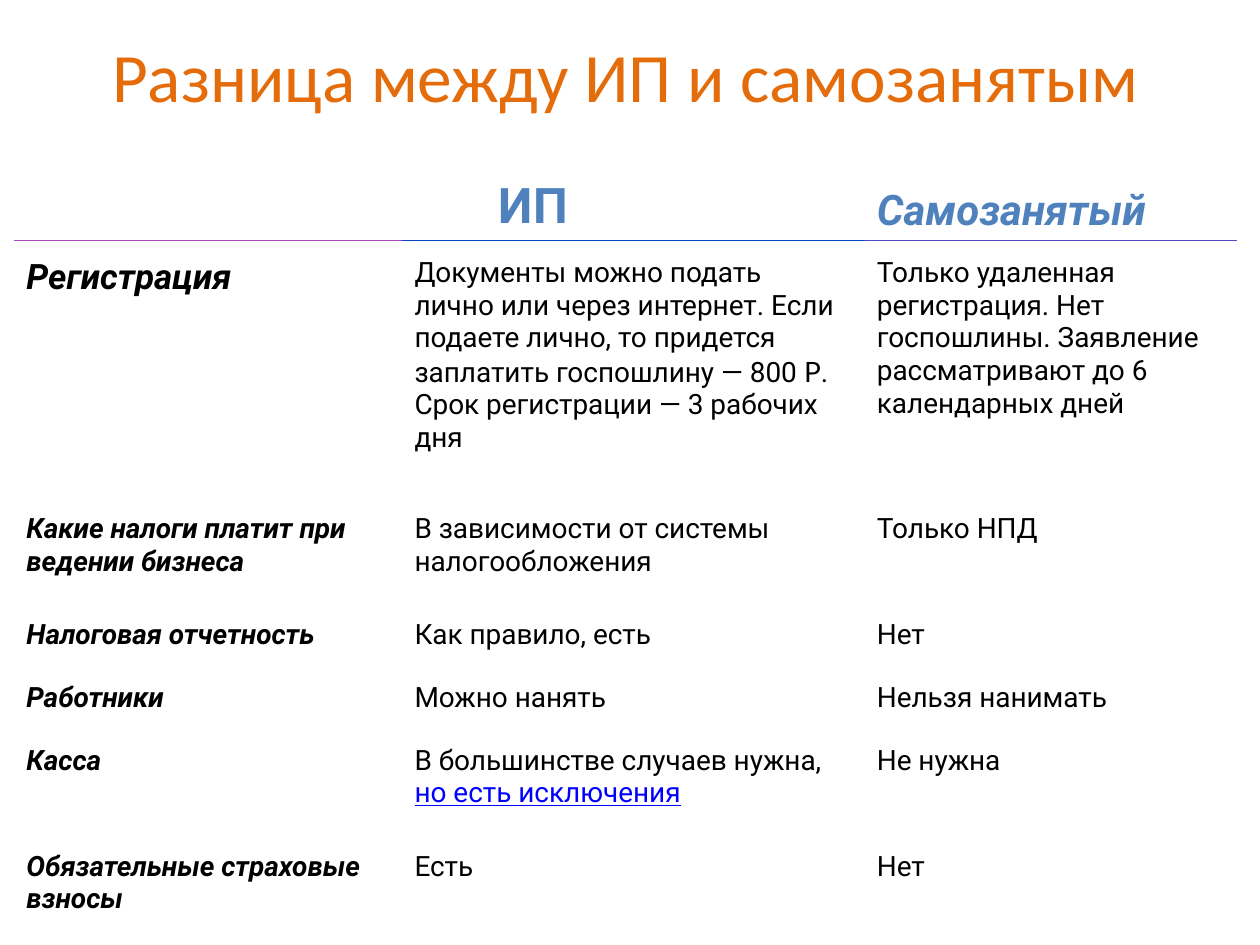
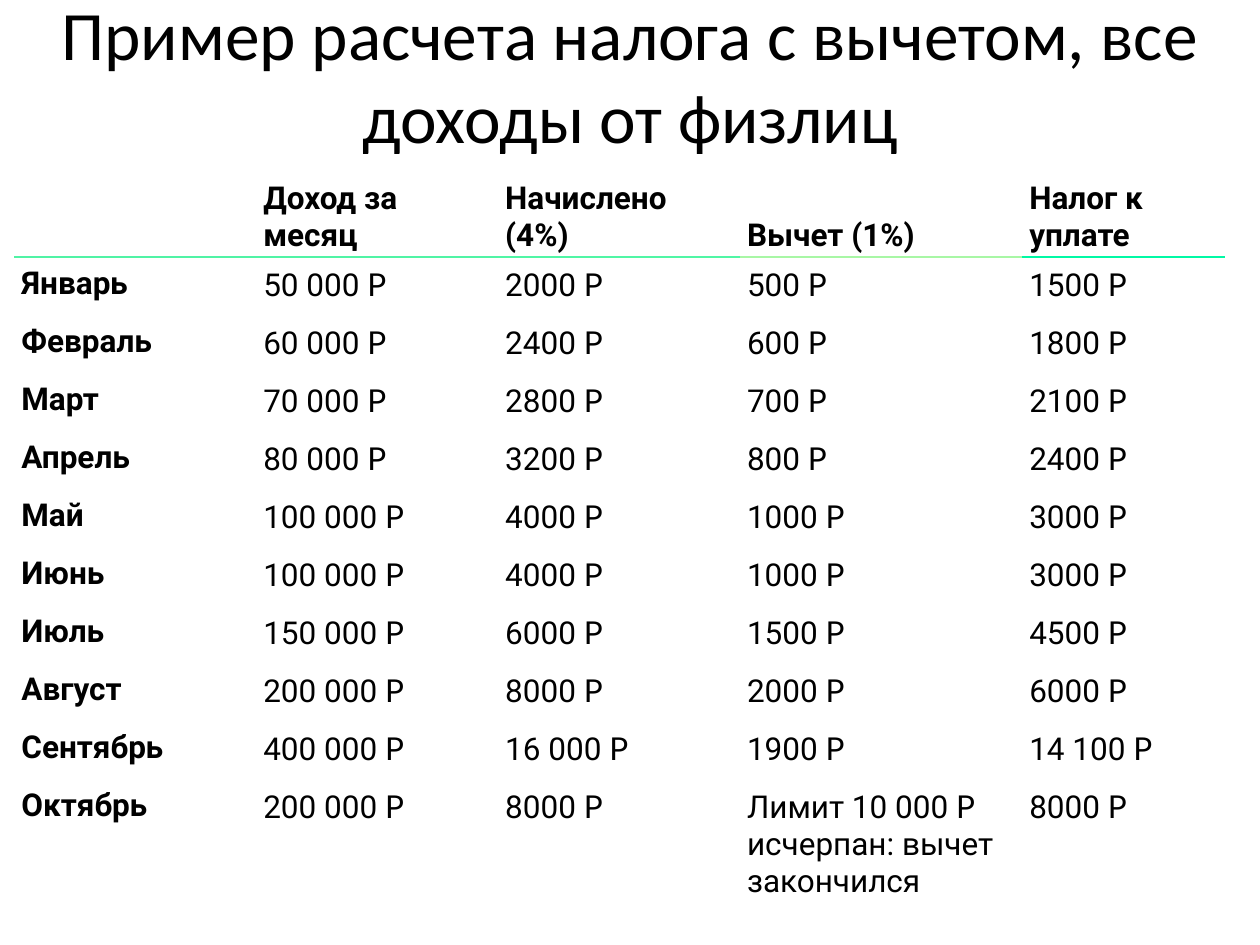
"""Two slides on self-employment: a status comparison and a tax example."""
from dataclasses import dataclass
from typing import Optional

from lxml import etree
from pptx import Presentation
from pptx import util as u
from pptx.dml.color import RGBColor
from pptx.enum import text
from pptx.oxml import ns

EMU_PER_PX = 9144
BLACK, WHITE, ORANGE, BLUE, LINK = "000000", "FFFFFF", "E46C0A", "4F81BD", "0000FF"
BODY, RUBLE = "Roboto", "Lato"


@dataclass(frozen=True)
class Run:
    text: str
    size: float = 16
    bold: bool = False
    italic: bool = False
    color: str = BLACK
    font: str = BODY
    underline: bool = False


@dataclass(frozen=True)
class Cell:
    paragraphs: tuple[tuple[Run, ...], ...] = ()
    indent: int = 0


@dataclass(frozen=True)
class Grid:
    left: int
    top: int
    cols: tuple[int, ...]
    rows: tuple[int, ...]
    rules: tuple[str, ...]
    head_margins: tuple[int, int, int, int]
    first_top: int
    body_top: int


def px(n: int) -> u.Emu:
    return u.Emu(n * EMU_PER_PX)


def rgb(color: str) -> RGBColor:
    return RGBColor.from_string(color)


def apply(obj: object, values: dict) -> None:
    for name, value in values.items():
        setattr(obj, name, value)


def add_run(p, run: Run) -> None:
    r = p.add_run()
    r.text = run.text
    apply(r.font, {"name": run.font, "size": u.Pt(run.size), "bold": run.bold,
                   "italic": run.italic, "underline": run.underline})
    r.font.color.rgb = rgb(run.color)


def add_title(s, width: int, title: str, color: str) -> None:
    tf = s.shapes.add_textbox(px(12), px(30), px(width), px(125)).text_frame
    apply(tf, {"word_wrap": True, "vertical_anchor": text.MSO_ANCHOR.MIDDLE,
               "margin_left": px(10), "margin_right": px(10),
               "margin_top": px(5), "margin_bottom": px(72)})
    p = tf.paragraphs[0]
    p.alignment = text.PP_ALIGN.CENTER
    add_run(p, Run(title, 39.6, color=color, font="Calibri"))


def add_border(cell, side: str, color: str) -> None:
    ln = etree.Element(ns.qn(f"a:ln{side}"), w=str(u.Pt(0.75)))
    fill = etree.SubElement(ln, ns.qn("a:solidFill"))
    etree.SubElement(fill, ns.qn("a:srgbClr"), val=color)
    cell._tc.get_or_add_tcPr().insert(0, ln)


def fill_cell(cell, content: Cell, margins: tuple[int, ...], anchor) -> None:
    cell.fill.solid()
    cell.fill.fore_color.rgb = rgb(WHITE)
    sides = ("margin_left", "margin_top", "margin_right", "margin_bottom")
    apply(cell, {"vertical_anchor": anchor, **{k: px(m) for k, m in zip(sides, margins)}})
    tf = cell.text_frame
    for i, runs in enumerate(content.paragraphs):
        p = tf.add_paragraph() if i else tf.paragraphs[0]
        if content.indent:
            p._p.get_or_add_pPr().set("indent", str(px(content.indent)))
        for run in runs:
            add_run(p, run)


def add_grid(s, grid: Grid, rows: list[list[Cell]]) -> None:
    table = s.shapes.add_table(len(grid.rows), len(grid.cols), px(grid.left), px(grid.top),
                               px(sum(grid.cols)), px(sum(grid.rows))).table
    apply(table, {"first_row": False, "horz_banding": False})
    for col, width in zip(table.columns, grid.cols):
        col.width = px(width)
    left, _, right, bottom = grid.head_margins
    for i, (row, height) in enumerate(zip(table.rows, grid.rows)):
        row.height = px(height)
        top = grid.first_top if i == 1 else grid.body_top
        margins = (left, top, right, bottom) if i else grid.head_margins
        anchor = text.MSO_ANCHOR.TOP if i else text.MSO_ANCHOR.BOTTOM
        for cell, content, rule in zip(row.cells, rows[i], grid.rules):
            fill_cell(cell, content, margins, anchor)
            if i < 2:
                add_border(cell, "T" if i else "B", rule)


def line(*runs: Run, indent: int = 0) -> Cell:
    return Cell((runs,), indent)


def comparison_row(label: str, sole: Cell, self_employed: str, size: int = 16) -> list[Cell]:
    return [line(Run(label, size, True, True)), sole, line(Run(self_employed))]


def amount(value: int) -> str:
    return f"{value:,}".replace(",", " ") if value >= 10000 else str(value)


def money(value: int) -> Cell:
    return line(Run(f"{amount(value)} ", 18), Run("Р", 18, font=RUBLE))


def tax_row(month: str, income: int, charged: int, deduction: Optional[int], due: int) -> list[Cell]:
    limit = Cell(((Run("Лимит 10 000 ", 18), Run("Р ", 18, font=RUBLE)),
                  (Run("исчерпан: вычет закончился", 18),)))
    return [line(Run(month, 18, True)), money(income), money(charged),
            limit if deduction is None else money(deduction), money(due)]


COMPARISON = [
    [Cell(), line(Run("ИП", 28, True, color=BLUE), indent=67),
     line(Run("Самозанятый", 24, True, True, BLUE))],
    comparison_row("Регистрация", line(
        Run("Документы можно подать лично или через интернет. Если подаете лично, "
            "то придется заплатить госпошлину — 800 "),
        Run("Р", font=RUBLE), Run(". Срок регистрации — 3 рабочих дня")),
        "Только удаленная регистрация. Нет госпошлины. Заявление рассматривают "
        "до 6 календарных дней", 20),
    comparison_row("Какие налоги платит при ведении бизнеса",
                   line(Run("В зависимости от системы налогообложения")), "Только НПД"),
    comparison_row("Налоговая отчетность", line(Run("Как правило, есть")), "Нет"),
    comparison_row("Работники", line(Run("Можно нанять")), "Нельзя нанимать"),
    comparison_row("Касса", line(Run("В большинстве случаев нужна, "),
                                 Run("но есть исключения", color=LINK, underline=True)),
                   "Не нужна"),
    comparison_row("Обязательные страховые взносы", line(Run("Есть")), "Нет"),
]
COMPARISON_GRID = Grid(12, 115, (308, 367, 294), (76, 207, 84, 50, 50, 84, 84),
                       ("A845BF", "0048BF", "5048BF"), (9, 8, 22, 4), 13, 9)

TAX_HEADS = ("Доход за месяц", "Начислено (4%)", "Вычет (1%)", "Налог к уплате")
TAXES = (
    ("Январь", 50000, 2000, 500, 1500),
    ("Февраль", 60000, 2400, 600, 1800),
    ("Март", 70000, 2800, 700, 2100),
    ("Апрель", 80000, 3200, 800, 2400),
    ("Май", 100000, 4000, 1000, 3000),
    ("Июнь", 100000, 4000, 1000, 3000),
    ("Июль", 150000, 6000, 1500, 4500),
    ("Август", 200000, 8000, 2000, 6000),
    ("Сентябрь", 400000, 16000, 1900, 14100),
    ("Октябрь", 200000, 8000, None, 8000),
)
TAX_GRID = Grid(12, 123, (192, 192, 192, 224, 160), (81, 48, *[46] * 8, 119),
                ("50F3A5", "50F4A5", "50F6A5", "A8F7A5", "00F9A5"), (5, 5, 12, 2), 7, 5)


def main() -> None:
    prs = Presentation()
    apply(prs, {"slide_width": px(1000), "slide_height": px(750)})
    blank = prs.slide_layouts[6]

    s = prs.slides.add_slide(blank)
    add_title(s, 969, "Разница между ИП и самозанятым", ORANGE)
    add_grid(s, COMPARISON_GRID, COMPARISON)

    s = prs.slides.add_slide(blank)
    add_title(s, 976, "Пример расчета налога с вычетом, все доходы от физлиц", BLACK)
    heads = [Cell(), *(line(Run(head, 18, True)) for head in TAX_HEADS)]
    add_grid(s, TAX_GRID, [heads, *(tax_row(*tax) for tax in TAXES)])

    prs.save("out.pptx")


if __name__ == "__main__":
    main()
